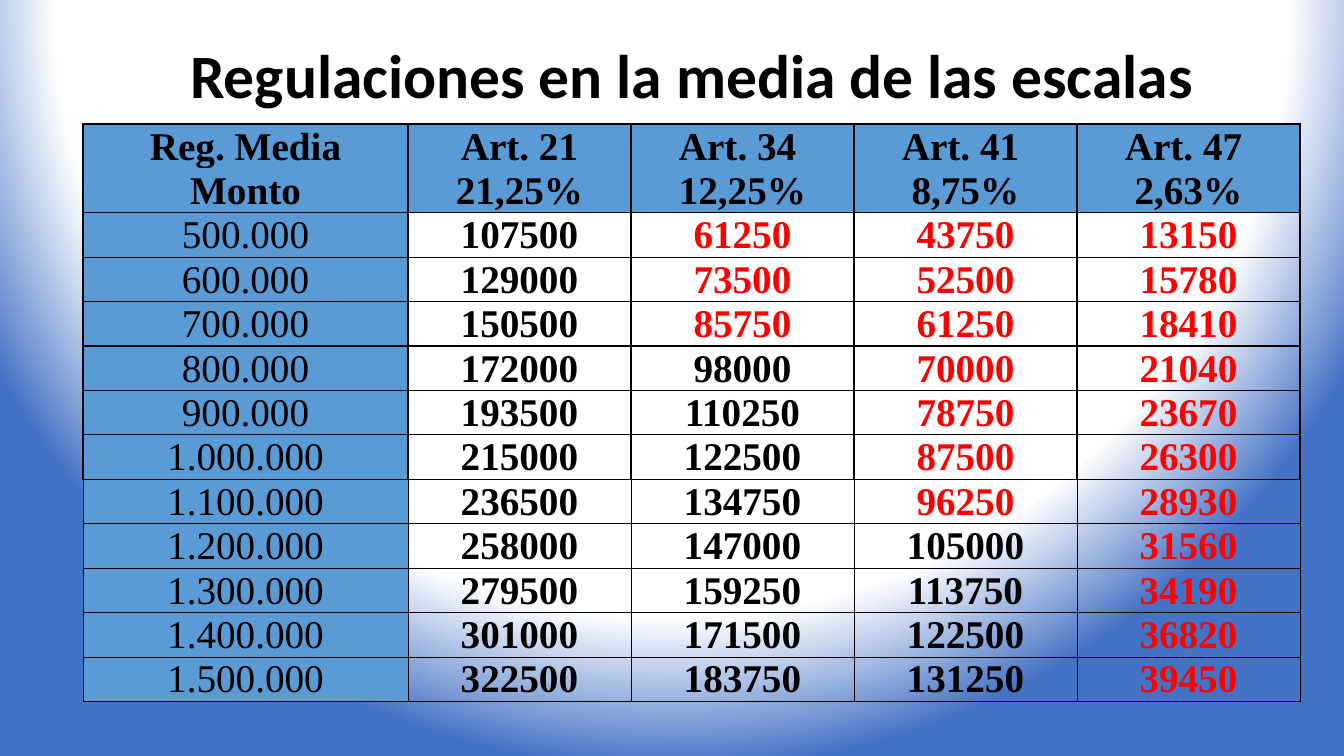
"""Build the slide of pension adjustments at the middle of each pay scale."""
from lxml.etree import SubElement
from pptx import Presentation
from pptx.dml.color import RGBColor
from pptx.enum.text import MSO_ANCHOR, PP_ALIGN
from pptx.oxml import parse_xml
from pptx.oxml.ns import nsdecls, qn
from pptx.util import Pt

TITLE = "Regulaciones en la media de las escalas"
ROWS = [
    ("Reg. Media", "Art. 21", "Art. 34 ", "Art. 41 ", "Art. 47 "),
    ("Monto", "21,25%", "12,25%", "8,75%", "2,63%"),
    ("500.000", 107500, 61250, 43750, 13150),
    ("600.000", 129000, 73500, 52500, 15780),
    ("700.000", 150500, 85750, 61250, 18410),
    ("800.000", 172000, 98000, 70000, 21040),
    ("900.000", 193500, 110250, 78750, 23670),
    ("1.000.000", 215000, 122500, 87500, 26300),
    ("1.100.000", 236500, 134750, 96250, 28930),
    ("1.200.000", 258000, 147000, 105000, 31560),
    ("1.300.000", 279500, 159250, 113750, 34190),
    ("1.400.000", 301000, 171500, 122500, 36820),
    ("1.500.000", 322500, 183750, 131250, 39450),
]
COLORS = {"ink": "000000", "low": "FF0000", "head": "5B9BD5",
          "white": "FFFFFF", "edge": "4472C4"}
HEADS = 2
LIMIT = 97000
THIN_FROM = 8
WIDTHS = [325, 223, 223, 223, 223]
ROW_H = 44
STOPS = [(0, "white"), (80, "white"), (100, "edge")]
TITLE_BOX = {"left": 65, "top": 12, "width": 1255, "height": 134}
FRAME = {"margin_left": 1, "margin_right": 1, "margin_top": 1, "margin_bottom": 0}


def px(n):
    return round(n * 914400 / 100.8)


def paint(slide):
    stops = "".join(f'<a:gs pos="{at * 1000}"><a:srgbClr val="{COLORS[name]}"/></a:gs>'
                    for at, name in STOPS)
    slide.element.cSld.insert(0, parse_xml(
        f'<p:bg {nsdecls("p", "a")}><p:bgPr><a:gradFill rotWithShape="1">'
        f'<a:gsLst>{stops}</a:gsLst><a:path path="circle">'
        '<a:fillToRect l="50000" t="-80000" r="50000" b="180000"/></a:path>'
        '</a:gradFill><a:effectLst/></p:bgPr></p:bg>'))


def style(frame, text, size, face, bold=True, color="ink"):
    para = frame.paragraphs[0]
    para.alignment = PP_ALIGN.CENTER
    run = para.add_run()
    run.text = text
    for key, value in {"size": Pt(size), "name": face, "bold": bold}.items():
        setattr(run.font, key, value)
    run.font.color.rgb = RGBColor.from_string(COLORS[color])
    return para


def border(cell, row):
    props = cell._tc.get_or_add_tcPr()
    for side in "LRTB":
        thin = row >= THIN_FROM or (row == THIN_FROM - 1 and side == "B")
        line = SubElement(props, qn(f"a:ln{side}"), w=str(Pt(0.5 if thin else 1)))
        if (row, side) in ((0, "B"), (1, "T")):
            SubElement(line, qn("a:noFill"))
        else:
            fill = SubElement(line, qn("a:solidFill"))
            SubElement(fill, qn("a:srgbClr"), val=COLORS["ink"])


def fill_cell(cell, row, col, value):
    border(cell, row)
    if row < HEADS or col == 0:
        cell.fill.solid()
        cell.fill.fore_color.rgb = RGBColor.from_string(COLORS["head"])
    else:
        cell.fill.background()
    for key, length in FRAME.items():
        setattr(cell, key, px(length))
    cell.vertical_anchor = MSO_ANCHOR.MIDDLE
    low = isinstance(value, int) and value < LIMIT
    style(cell.text_frame, str(value), 28, "Times New Roman",
          row < HEADS or col > 0, "low" if low else "ink")


def main():
    deck = Presentation()
    deck.slide_width, deck.slide_height = px(1344), px(756)
    slide = deck.slides.add_slide(deck.slide_layouts[5])
    paint(slide)

    title = slide.shapes.title
    for key, length in TITLE_BOX.items():
        setattr(title, key, px(length))
    title.text_frame.word_wrap = True
    title.text_frame.vertical_anchor = MSO_ANCHOR.MIDDLE
    style(title.text_frame, TITLE, 44, "Calibri").line_spacing = 0.9

    grid = slide.shapes.add_table(len(ROWS), len(WIDTHS), px(83), px(124),
                                  px(sum(WIDTHS)), px(ROW_H * len(ROWS))).table
    grid.first_row = grid.horz_banding = False
    for col, width in enumerate(WIDTHS):
        grid.columns[col].width = px(width)
    for row, values in enumerate(ROWS):
        grid.rows[row].height = px(ROW_H)
        for col, value in enumerate(values):
            fill_cell(grid.cell(row, col), row, col, value)
    deck.save("out.pptx")


if __name__ == "__main__":
    main()
